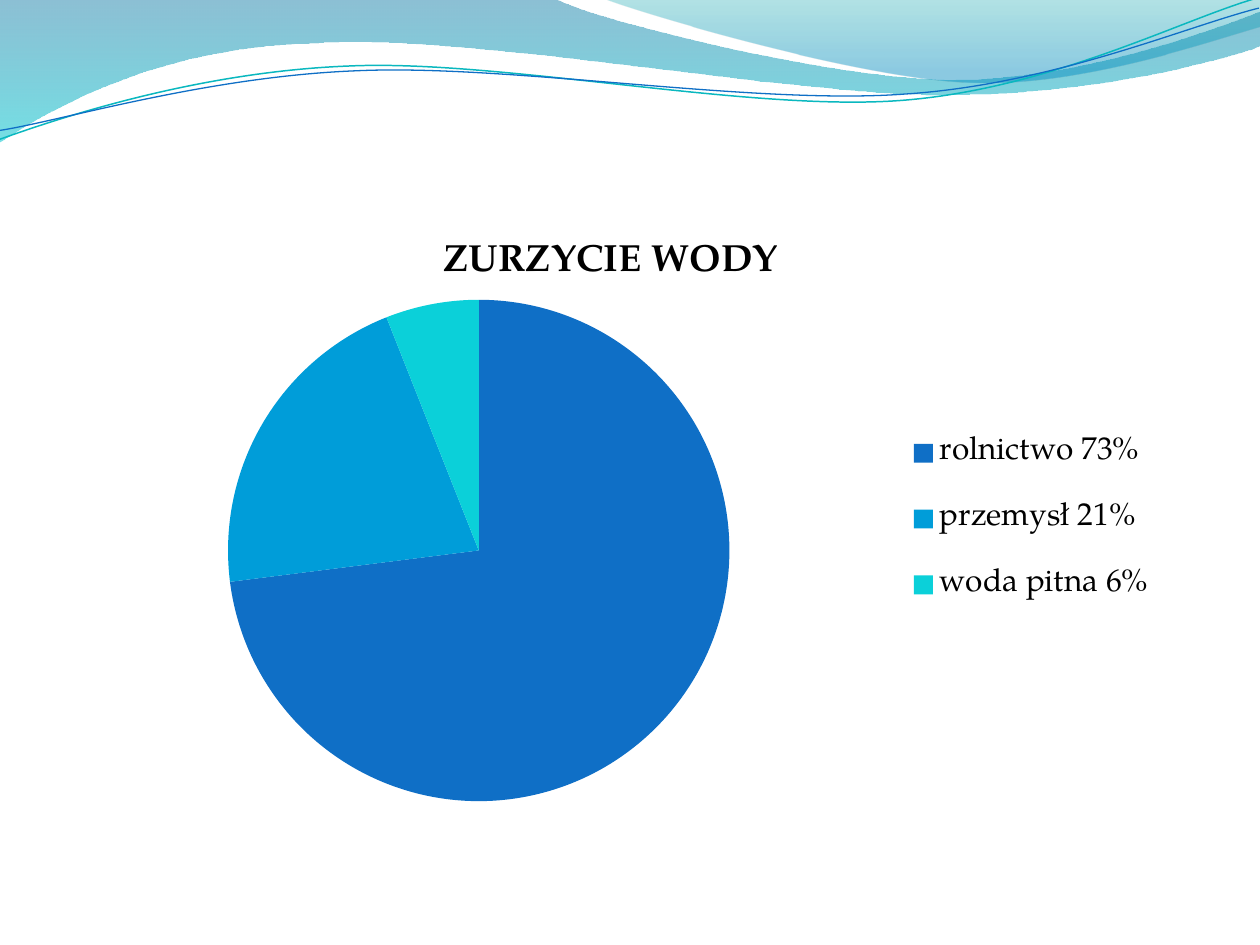
"""Build a slide with a wave banner and a pie chart of water use."""
from lxml import etree
from pptx import Presentation
from pptx.chart.data import CategoryChartData
from pptx.dml.color import RGBColor
from pptx.enum.chart import XL_CHART_TYPE as ChartType, XL_LEGEND_POSITION as LegendPosition
from pptx.oxml import parse_xml
from pptx.oxml.ns import nsdecls, qn
from pptx.util import Inches, Pt

FONT = "TeX Gyre Pagella"
BLACK = RGBColor(0x00, 0x00, 0x00)
BLUE = RGBColor(0x0F, 0x6F, 0xC6)
SKY = RGBColor(0x00, 0x9D, 0xD9)
TURQUOISE = RGBColor(0x0B, 0xD0, 0xD9)
TEAL = RGBColor(0x0A, 0xB8, 0xBF)
DEEP_BLUE = RGBColor(0x00, 0x74, 0xA1)
CYAN = RGBColor(0x00, 0xC6, 0xCF)
SEA_GREEN = RGBColor(0x00, 0xA1, 0xA9)
OCEAN = RGBColor(0x00, 0x8B, 0xBF)
CHART_WIDTH, CHART_HEIGHT = 9, 4.8


def add_wave(slide, start, segments, close):
    """Draw segments given as line ends (x, y) or Bezier triples (six numbers)."""
    points = [(Inches(x), Inches(y)) for segment in segments
              for x, y in zip(segment[::2], segment[1::2])]
    builder = slide.shapes.build_freeform(Inches(start[0]), Inches(start[1]), scale=1.0)
    builder.add_line_segments(points, close=close)
    wave = builder.convert_to_shape()
    wave.shadow.inherit = False
    steps = iter(list(wave.element.spPr.iter(qn("a:lnTo"))))
    for segment in segments:
        step = next(steps)
        if len(segment) == 6:
            step_parent = step.getparent()
            curve = etree.Element(qn("a:cubicBezTo"))
            step_parent.replace(step, curve)
            for corner in (step, next(steps), next(steps)):
                curve.append(corner[0])
                if corner.getparent() is not None:
                    step_parent.remove(corner)
    return wave


def place(element, index, target, x, y, width, height):
    """Give a chart part a manual layout, in inches within the chart."""
    for old in element.findall(qn("c:layout")):
        element.remove(old)
    layout = parse_xml(
        f'<c:layout {nsdecls("c")}><c:manualLayout>{target}'
        '<c:xMode val="edge"/><c:yMode val="edge"/>'
        f'<c:x val="{x / CHART_WIDTH}"/><c:y val="{y / CHART_HEIGHT}"/>'
        f'<c:w val="{width / CHART_WIDTH}"/><c:h val="{height / CHART_HEIGHT}"/>'
        '</c:manualLayout></c:layout>')
    element.insert(index, layout)


deck = Presentation()
deck.slide_width, deck.slide_height = Inches(10), Inches(7.5)
slide = deck.slides.add_slide(deck.slide_layouts[6])

filled_waves = [
    ((0, 0),
     [(4.4, -0.01), (4.76, 0.17, 6.64, 0.63, 7.58, 0.63), (8.53, 0.63, 9.58, 0.26, 10, 0.09),
      (10.01, 0.36), (9.83, 0.44, 8.7, 0.76, 7.46, 0.75), (6.22, 0.75, 3.82, 0.28, 2.57, 0.34),
      (1.29, 0.36, 0.46, 0.83, -0.01, 1.13), (0, 0)],
     [(0, DEEP_BLUE, 45), (1, CYAN, 55)]),
    ((4.79, -0.01),
     [(5.09, 0.11, 6.82, 0.62, 7.69, 0.65), (8.56, 0.69, 9.61, 0.32, 10, 0.21),
      (10, 0), (4.79, -0.01)],
     [(0, SEA_GREEN, 30), (0.8, OCEAN, 45)]),
]
for start, segments, stops in filled_waves:
    wave = add_wave(slide, start, segments, True)
    wave.line.fill.background()
    wave.fill.gradient()
    wave.fill.gradient_angle = 270
    for stop, (position, color, _) in zip(wave.fill.gradient_stops, stops):
        stop.position = position
        stop.color.rgb = color
    colors = wave.element.spPr.iter(qn("a:srgbClr"))
    for color_element, (_, _, opacity) in zip(colors, stops):
        etree.SubElement(color_element, qn("a:alpha"), val=str(opacity * 1000))

line_waves = [
    ((-0.02, 0.87),
     [(0.47, 0.72, 1.58, 0.41, 2.77, 0.42), (3.96, 0.42, 5.91, 0.93, 7.12, 0.9),
      (8.32, 0.87, 9.4, 0.36, 10, 0.22)], TEAL, 0.85),
    ((-0.02, 0.8),
     [(0.46, 0.75, 1.64, 0.45, 2.83, 0.46), (4.03, 0.46, 5.96, 0.88, 7.16, 0.85),
      (8.35, 0.83, 9.42, 0.42, 10.01, 0.3)], BLUE, 0.75),
]
for start, segments, color, width in line_waves:
    wave = add_wave(slide, start, segments, False)
    wave.rotation = 357.3
    wave.fill.background()
    wave.line.color.rgb = color
    wave.line.width = Pt(width)

water_use = CategoryChartData()
water_use.categories = ["rolnictwo 73%", "przemysł 21%", "woda pitna 6%"]
water_use.add_series("Series 1", (73, 21, 6))
chart = slide.shapes.add_chart(
    ChartType.PIE, Inches(0.35), Inches(1.7),
    Inches(CHART_WIDTH), Inches(CHART_HEIGHT), water_use).chart
chart.font.name = FONT
chart.font.size = Pt(18)
chart.font.color.rgb = BLACK

chart.has_title = True
title = chart.chart_title.text_frame.paragraphs[0]
title.text = "ZURZYCIE WODY"
title.font.name = FONT
title.font.size = Pt(21.6)
title.font.bold = True
title.font.color.rgb = BLACK
chart.chart_title.include_in_layout = False

chart.has_legend = True
chart.legend.position = LegendPosition.RIGHT
chart.legend.include_in_layout = False

pie = chart.plots[0]
pie.vary_by_categories = True
for index, color in enumerate((BLUE, SKY, TURQUOISE)):
    fill = pie.series[0].points[index].format.fill
    fill.solid()
    fill.fore_color.rgb = color

plot_area = next(chart.element.iter(qn("c:plotArea")))
legend = next(chart.element.iter(qn("c:legend")))
place(plot_area, 0, '<c:layoutTarget val="inner"/>', 1.46, 0.68, 3.98, 3.98)
place(legend, 1, "", 6.8, 1.5, 2.07, 1.84)

deck.save("out.pptx")
